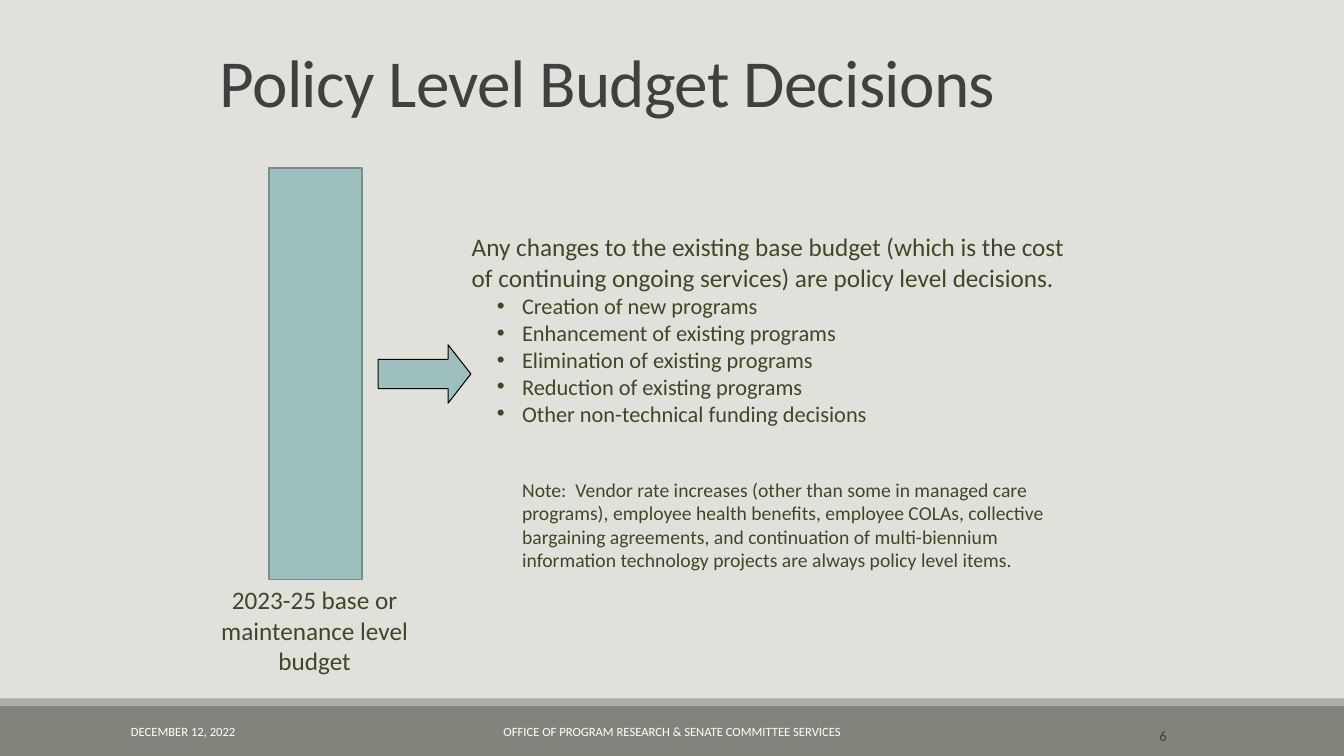
"""Build the policy level budget decisions slide."""
from pptx import Presentation
from pptx.dml.color import RGBColor
from pptx.enum.shapes import MSO_SHAPE as Kind
from pptx.enum.text import MSO_ANCHOR as Anchor, PP_ALIGN as Align
from pptx.oxml.ns import qn
from pptx.util import Inches, Pt
from lxml.etree import SubElement

TITLE = "Policy Level Budget Decisions"
LABEL = ["2023-25 base or", "maintenance level", "budget"]
LEAD = ("Any changes to the existing base budget (which is the cost of "
        "continuing ongoing services) are policy level decisions.")
ITEMS = [
    "Creation of new programs",
    "Enhancement of existing programs",
    "Elimination of existing programs",
    "Reduction of existing programs",
    "Other non-technical funding decisions",
]
NOTE = ("Note:  Vendor rate increases (other than some in managed care "
        "programs), employee health benefits, employee COLAs, collective "
        "bargaining agreements, and continuation of multi-biennium "
        "information technology projects are always policy level items.")
THEME = {
    "font": "Calibri", "back": "E1E1DB", "band": "82847C", "strip": "ACADA8",
    "title": "404040", "text": "3F4727", "pale": "FFFFFF",
    "teal": "9DBFBE", "edge": "748D8D", "black": "000000",
    "head": 48, "body": 18, "item": 16, "note": 14, "page": 10.5, "foot": 9,
}
SHAPES = [
    (Kind.RECTANGLE, (0, 7, 13.33, 0.5), "band", None, 0),
    (Kind.RECTANGLE, (0, 6.93, 13.33, 0.07), "strip", None, 0),
    (Kind.RECTANGLE, (2.67, 1.67, 0.92, 4.08), "teal", "edge", 1.25),
    (Kind.RIGHT_ARROW, (3.75, 3.42, 0.92, 0.58), "teal", "black", 0.75),
]
FOOTER = [
    ("DECEMBER 12, 2022", (1.2, 7.06, 2.7, 0.4), "foot", "pale", Align.LEFT),
    ("OFFICE OF PROGRAM RESEARCH & SENATE COMMITTEE SERVICES",
     (4.03, 7.06, 5.27, 0.4), "foot", "pale", Align.CENTER),
    ("6", (11.27, 7.1, 0.4, 0.4), "page", "text", Align.RIGHT),
]


def color(name):
    return RGBColor.from_string(THEME[name])


def assign(obj, form):
    for key, val in form.items():
        setattr(obj, key, val)


def place(shape, box):
    sides = ("left", "top", "width", "height")
    assign(shape, dict(zip(sides, map(Inches, box))))


def draw(slide, kind, box, fill, line, width):
    shape = slide.shapes.add_shape(kind, *map(Inches, box))
    shape.shadow.inherit = False
    shape.fill.solid()
    shape.fill.fore_color.rgb = color(fill)
    if line:
        shape.line.color.rgb = color(line)
        shape.line.width = Pt(width)
    else:
        shape.line.fill.background()
    return shape


def style(para, text, size, tint="text", **form):
    run = para.add_run()
    run.text = text
    assign(run.font, {"name": THEME["font"], "size": Pt(THEME[size])})
    run.font.color.rgb = color(tint)
    assign(para, form)
    return run


def indent(para, bullet):
    props = para._p.get_or_add_pPr()
    props.set("marL", str(Inches(0.5)))
    if bullet:
        props.set("indent", str(-Inches(0.25)))
        SubElement(props, qn("a:buFont"), typeface="Arial")
        SubElement(props, qn("a:buChar"), char="•")


def write(slide, box, rows, anchor=Anchor.TOP):
    frame = slide.shapes.add_textbox(*map(Inches, box)).text_frame
    assign(frame, {"word_wrap": True, "vertical_anchor": anchor})
    for num, (text, size, tint, form) in enumerate(rows):
        para = frame.add_paragraph() if num else frame.paragraphs[0]
        style(para, text, size, tint, **form)
    return frame.paragraphs


def main():
    deck = Presentation()
    assign(deck, {"slide_width": Inches(13.33), "slide_height": Inches(7.5)})
    slide = deck.slides.add_slide(deck.slide_layouts[5])
    slide.background.fill.solid()
    slide.background.fill.fore_color.rgb = color("back")

    for part in SHAPES:
        shape = draw(slide, *part)
    shape.adjustments[1] = 0.39

    head = slide.shapes.title
    place(head, (2.08, 0.33, 9.5, 0.92))
    assign(head.text_frame, {"word_wrap": True,
                             "vertical_anchor": Anchor.BOTTOM})
    run = style(head.text_frame.paragraphs[0], TITLE, "head", "title",
                alignment=Align.LEFT, line_spacing=0.85)
    run.font._element.set("spc", "-50")

    write(slide, (2.08, 5.75, 2.08, 1.01),
          [(t, "body", "text", {"alignment": Align.CENTER}) for t in LABEL])
    rows = [(LEAD, "body", "text", {})]
    rows += [(t, "item", "text", {"level": 1}) for t in ITEMS]
    rows.append((NOTE, "note", "text",
                 {"level": 1, "space_before": Pt(36.6)}))
    paras = write(slide, (4.58, 2.25, 6.22, 3.8), rows)
    for para in paras[1:]:
        indent(para, para is not paras[-1])

    for text, box, size, tint, align in FOOTER:
        write(slide, box, [(text, size, tint, {"alignment": align})],
              Anchor.MIDDLE)
    deck.save("out.pptx")


if __name__ == "__main__":
    main()
